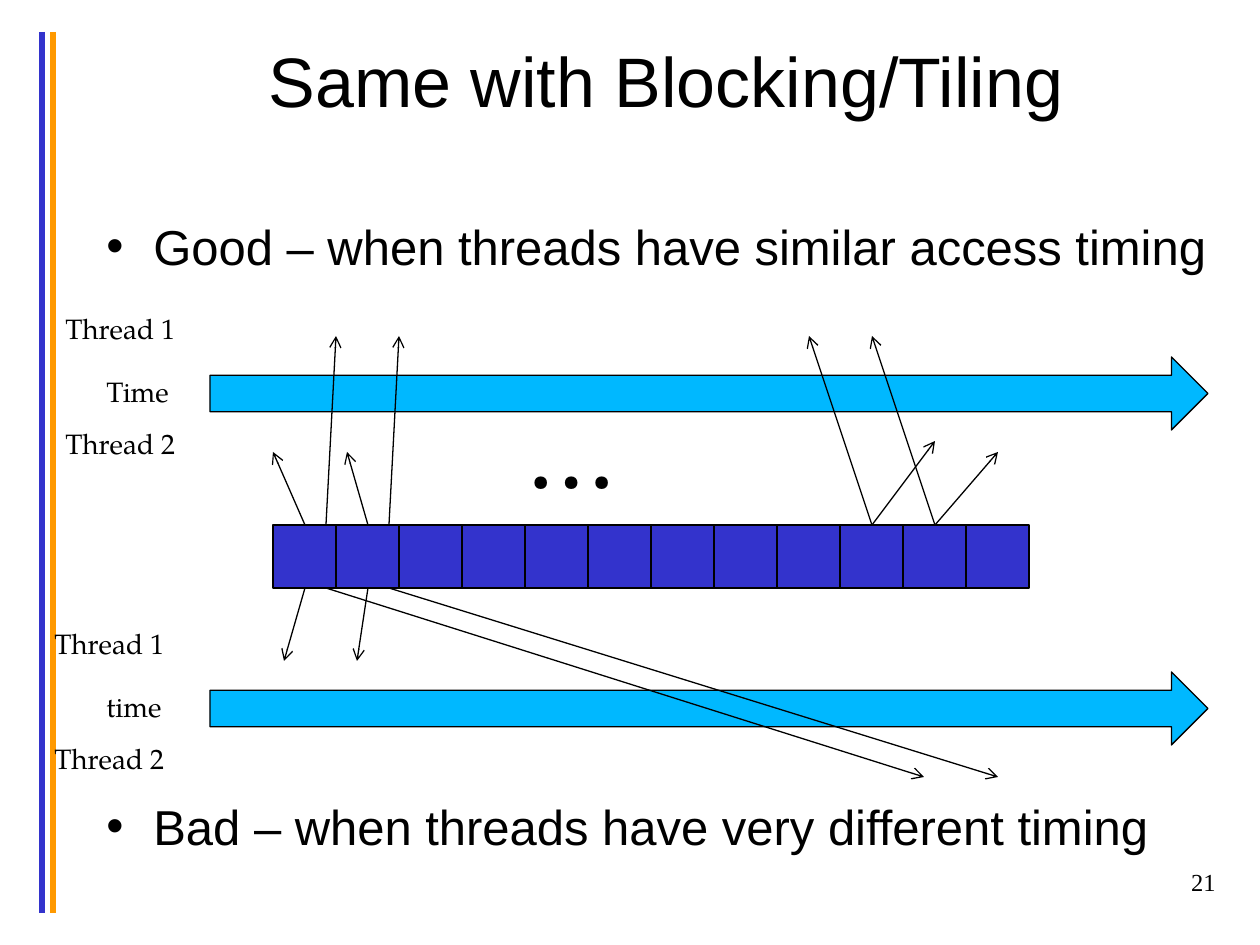
from lxml.etree import SubElement
from pptx import Presentation
from pptx.dml.color import RGBColor
from pptx.enum.shapes import MSO_CONNECTOR as Connector, MSO_SHAPE as Shape
from pptx.enum.text import MSO_ANCHOR as Anchor, PP_ALIGN as Align
from pptx.oxml.ns import qn
from pptx.util import Emu, Pt

PX = 914400 / 126
BLACK = RGBColor(0x00, 0x00, 0x00)
BLUE = RGBColor(0x33, 0x33, 0xCC)
ORANGE = RGBColor(0xFF, 0x99, 0x00)
CYAN = RGBColor(0x00, 0xB8, 0xFF)
SANS, SERIF, NUMBER_FONT = "Arial", "TeX Gyre Pagella", "Times New Roman"

# Content: all lengths in px
TITLE = "Same with Blocking/Tiling"
BULLETS = [  # text, top, height
    ("Good – when threads have similar access timing", 210, 305),
    ("Bad – when threads have very different timing", 790, 70),
]
RULES = [(42, BLUE), (53, ORANGE)]
TIMELINES = [357, 672]
LABELS = [  # text, left, top, width, wraps
    ("Thread 1", 53, 305, 199, True),
    ("Thread 2", 53, 420, 199, True),
    ("Time", 94, 368, 113, False),
    ("Thread 1", 42, 620, 199, True),
    ("Thread 2", 42, 735, 199, True),
    ("time", 94, 683, 101, False),
]
CELL_COUNT, CELL, CELLS_LEFT, CELLS_TOP = 12, 63, 273, 525
CELLS_BOTTOM = CELLS_TOP + CELL
ACCESSES = {  # edge of the cell row: (start x, end x, end y)
    CELLS_TOP: [
        (305, 273, 452), (326, 336, 336), (368, 347, 452), (389, 399, 336),
        (872, 935, 441), (935, 998, 452), (872, 809, 336), (935, 872, 336),
    ],
    CELLS_BOTTOM: [
        (305, 284, 661), (326, 924, 777), (368, 357, 661), (389, 998, 777),
    ],
}


def px(*lengths):
    return [Emu(round(length * PX)) for length in lengths]


def add_text(text, place, size, font, align=Align.LEFT, wraps=True):
    box = slide.shapes.add_textbox(*px(*place))
    box.text_frame.word_wrap = wraps
    para = box.text_frame.paragraphs[0]
    para.text = text
    para.alignment = align
    para.font.size = Pt(size)
    para.font.name = font
    para.font.color.rgb = BLACK
    return box.text_frame


def add_bullet(para):
    props = para._p.get_or_add_pPr()
    indent = px(47)[0]
    props.set("marL", str(indent))
    props.set("indent", str(-indent))
    SubElement(props, qn("a:buFont"), typeface=SANS)
    SubElement(props, qn("a:buChar"), char="•")


def add_shape(kind, place, fill):
    shape = slide.shapes.add_shape(kind, *px(*place))
    shape.shadow.inherit = False
    shape.fill.solid()
    shape.fill.fore_color.rgb = fill
    shape.line.color.rgb = BLACK
    shape.line.width = Pt(0.75)


def add_line(ends, color, width, arrow=False):
    line = slide.shapes.add_connector(Connector.STRAIGHT, *px(*ends))
    line.line.color.rgb = color
    line.line.width = Pt(width)
    if arrow:
        SubElement(line.line._get_or_add_ln(), qn("a:tailEnd"), type="arrow")
    SubElement(line._element.spPr, qn("a:effectLst"))


deck = Presentation()
deck.slide_width, deck.slide_height = px(1260, 945)
slide = deck.slides.add_slide(deck.slide_layouts[6])

# Side rules, title and bullets
for x, color in RULES:
    add_line((x, 32, x, 913), color, 3)
title = add_text(TITLE, (94, 0, 1144, 158), 40, SANS, Align.CENTER)
title.vertical_anchor = Anchor.MIDDLE
for text, top, height in BULLETS:
    frame = add_text(text, (94, top, 1144, height), 28, SANS)
    add_bullet(frame.paragraphs[0])

# Timelines and their labels
for top in TIMELINES:
    add_shape(Shape.RIGHT_ARROW, (210, top, 998, 73), CYAN)
for text, left, top, width, wraps in LABELS:
    add_text(text, (left, top, width, 64), 16, SERIF, wraps=wraps)

# Memory cells and the accesses to them
for index in range(CELL_COUNT):
    left = CELLS_LEFT + index * CELL
    add_shape(Shape.RECTANGLE, (left, CELLS_TOP, CELL, CELL), BLUE)
for edge, arrows in ACCESSES.items():
    for start_x, end_x, end_y in arrows:
        add_line((start_x, edge, end_x, end_y), BLACK, 0.75, arrow=True)
add_text("…", (514, 378, 210, 140), 60, SERIF)

# Page number
add_text("21", (966, 861, 262, 63), 14, NUMBER_FONT, Align.RIGHT)

deck.save("out.pptx")
